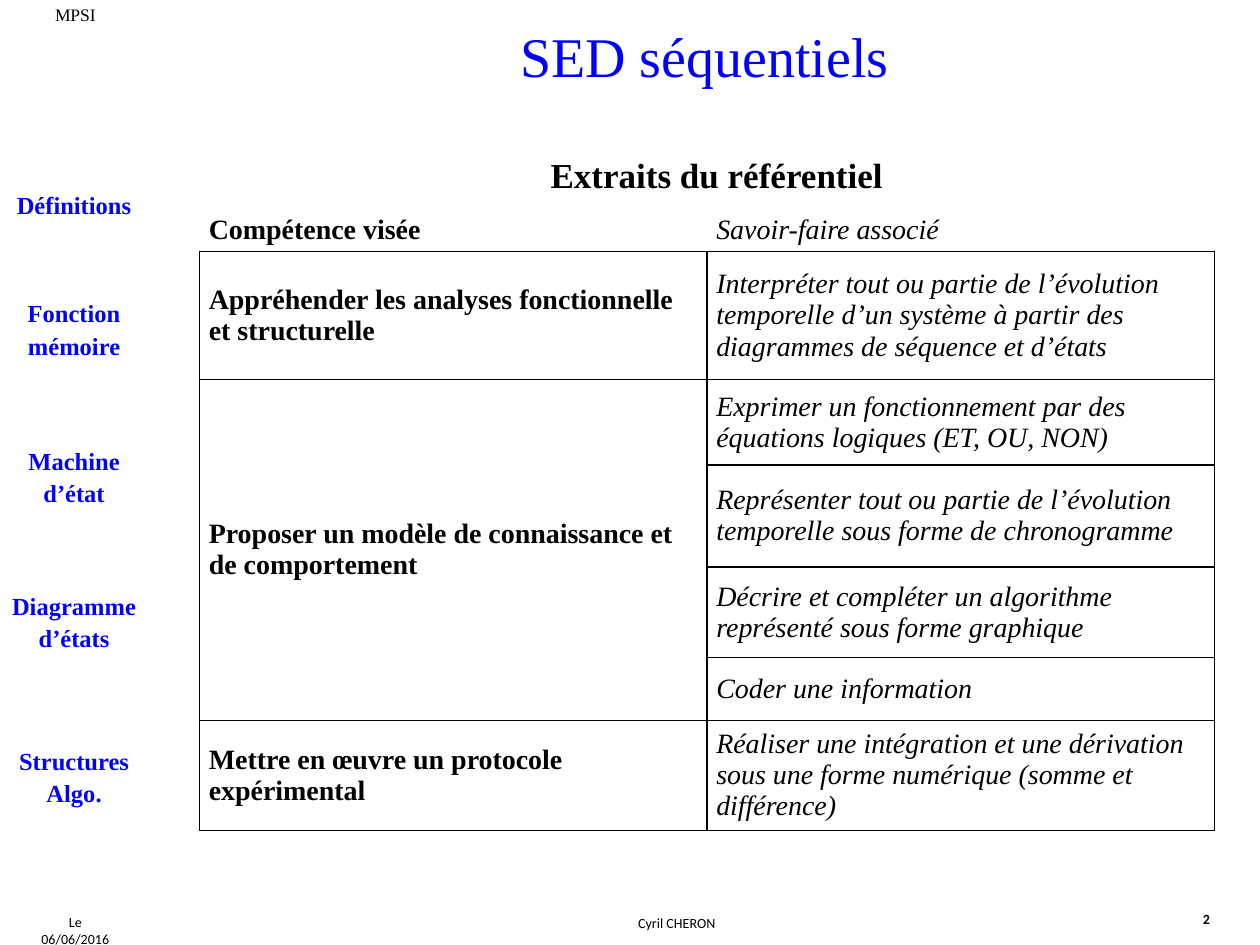
from lxml import etree
from pptx import Presentation
from pptx import util as u
from pptx.dml.color import RGBColor
from pptx.enum import text
from pptx.oxml import ns

BLACK = RGBColor(0, 0, 0)
WHITE = RGBColor(255, 255, 255)
BLUE = RGBColor(0, 0, 255)
SERIF = "Times New Roman"
SANS = "Calibri"
CENTER = text.PP_ALIGN.CENTER
LEFT = text.PP_ALIGN.LEFT


class SlideBuilder:
    def __init__(self, slide):
        self.s = slide

    def style(self, p, size, color=BLACK, font=SERIF, bold=False, italic=False):
        p.font.size = u.Pt(size)
        p.font.name = font
        p.font.color.rgb = color
        p.font.bold = bold
        p.font.italic = italic

    def text_box(self, box, lines, size, align=CENTER, wrap=True, inset=0.25,
                 spacing=None, **style):
        sp = self.s.shapes.add_textbox(*map(u.Cm, box))
        tf = sp.text_frame
        tf.word_wrap = wrap
        tf.margin_left = tf.margin_right = u.Cm(inset)
        tf.text = lines
        for p in tf.paragraphs:
            p.alignment = align
            if spacing:
                p.line_spacing = spacing
            self.style(p, size, **style)

    def border(self, cell, colors):
        tc_pr = cell._tc.get_or_add_tcPr()
        for i, (side, color) in enumerate(zip("LRTB", colors)):
            ln = etree.Element(ns.qn(f"a:ln{side}"), w=str(u.Pt(1)))
            fill = etree.SubElement(ln, ns.qn("a:solidFill"))
            etree.SubElement(fill, ns.qn("a:srgbClr"), val=str(color))
            tc_pr.insert(i, ln)

    def table(self, box, heights, rows, merge):
        table = self.s.shapes.add_table(len(rows), 2, *map(u.Cm, box)).table
        table.first_row = table.horz_banding = False
        for row, height in zip(table.rows, heights):
            row.height = u.Cm(height)
        first, last = merge
        table.cell(first, 0).merge(table.cell(last, 0))
        for i, row in enumerate(rows):
            for j, words in enumerate(row):
                cell = table.cell(i, j)
                cell.fill.background()
                cell.margin_left = cell.margin_right = u.Cm(0.19)
                cell.margin_top = cell.margin_bottom = 0
                cell.vertical_anchor = text.MSO_ANCHOR.MIDDLE
                self.border(cell, [BLACK] * 4 if i else [WHITE] * 3 + [BLACK])
                if words:
                    p = cell.text_frame.paragraphs[0]
                    p.text = words
                    self.style(p, 16, bold=j == 0, italic=j == 1)


MENU = [
    (3.66, 0.86, "Définitions"),
    (5.84, 1.45, "Fonction mémoire"),
    (8.81, 1.45, "Machine d’état"),
    (11.73, 1.45, "Diagramme d’états"),
    (14.86, 1.45, "Structures\nAlgo."),
]
ROWS = [
    ("Compétence visée", "Savoir-faire associé"),
    ("Appréhender les analyses fonctionnelle et structurelle",
     "Interpréter tout ou partie de l’évolution temporelle d’un système "
     "à partir des diagrammes de séquence et d’états"),
    ("Proposer un modèle de connaissance et de comportement",
     "Exprimer un fonctionnement par des équations logiques (ET, OU, NON)"),
    ("", "Représenter tout ou partie de l’évolution temporelle sous forme "
         "de chronogramme"),
    ("", "Décrire et compléter un algorithme représenté sous forme graphique"),
    ("", "Coder une information"),
    ("Mettre en œuvre un protocole expérimental",
     "Réaliser une intégration et une dérivation sous une forme numérique "
     "(somme et différence)"),
]
HEIGHTS = [0.85, 2.58, 1.72, 2.06, 1.82, 1.27, 2.22]


def main():
    prs = Presentation()
    prs.slide_width, prs.slide_height = u.Cm(25.4), u.Cm(19.05)
    b = SlideBuilder(prs.slides.add_slide(prs.slide_layouts[6]))

    b.text_box((0.43, 18.29, 2.18, 0.6), "Le 06/06/2016", 8, wrap=False, font=SANS)
    b.text_box((3.18, 18.31, 20.93, 0.6), "Cyril CHERON", 8, font=SANS)
    b.text_box((24, 18.24, 0.99, 0.6), "2", 8, align=LEFT, wrap=False,
               font=SANS, bold=True)
    b.text_box((0.43, -0.05, 2.18, 0.68), "MPSI", 10)
    for top, height, label in MENU:
        b.text_box((0.02, top, 2.95, height), label, 14, inset=0.1,
                   spacing=1.09, color=BLUE, bold=True)
    b.text_box((10.19, 0.3, 8.03, 1.62), "SED séquentiels", 32, wrap=False, color=BLUE)
    b.text_box((10.85, 2.97, 7.26, 1.11), "Extraits du référentiel", 20,
               align=LEFT, wrap=False, bold=True)
    b.table((4.02, 4.22, 20.46, sum(HEIGHTS)), HEIGHTS, ROWS, merge=(2, 5))

    prs.save("out.pptx")


if __name__ == "__main__":
    main()
